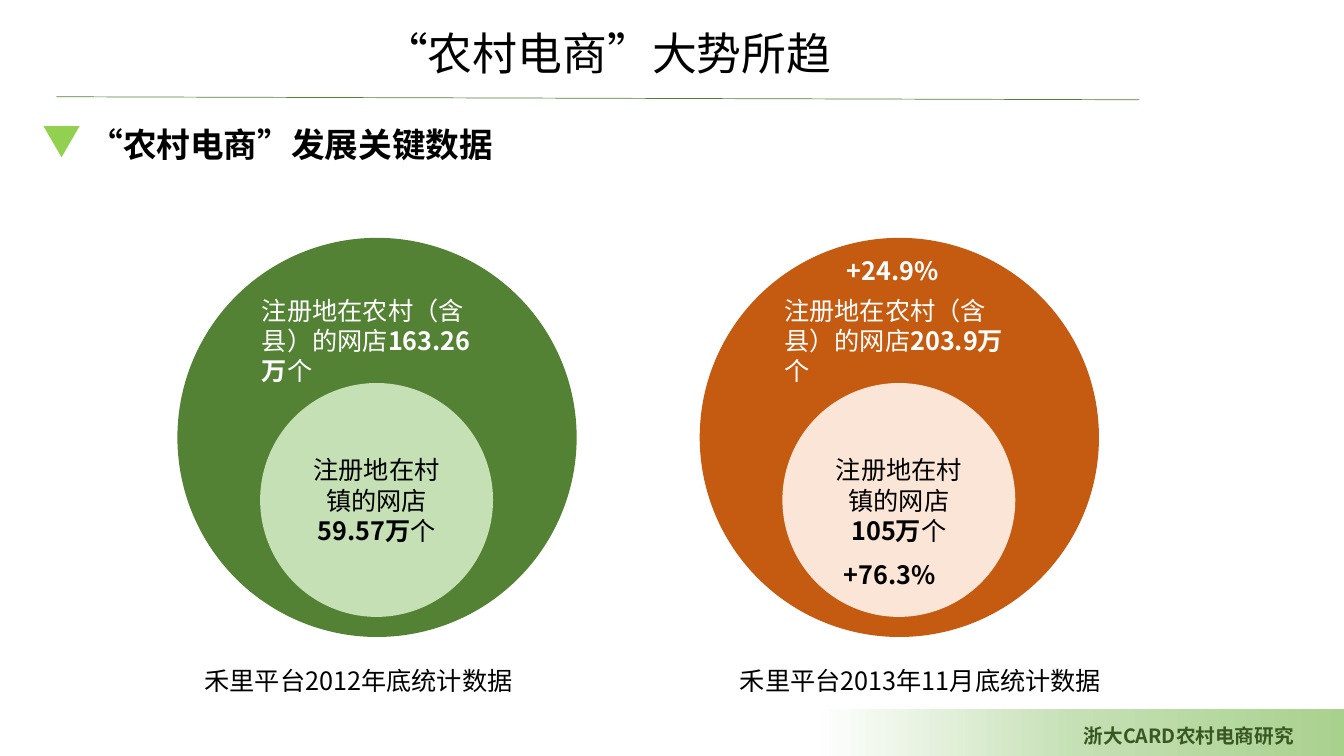
from copy import deepcopy
from pptx import Presentation
from pptx.dml.color import RGBColor
from pptx.enum.shapes import MSO_CONNECTOR as Link, MSO_SHAPE as Form
from pptx.enum.text import MSO_ANCHOR as Anchor, MSO_AUTO_SIZE as Fit, PP_ALIGN as Align
from pptx.oxml.ns import qn
from pptx.util import Inches, Pt
from lxml.etree import SubElement

FONT = "Noto Sans CJK SC"


def paint(color, value):
    color.rgb = RGBColor.from_string(value)


def style(run, size, color, bold):
    run.font.size = Pt(size)
    run.font.bold = bold
    run.font.name = FONT
    paint(run.font.color, color)
    SubElement(run.font._element, qn("a:ea")).set("typeface", FONT)


def write(frame, parts, size, color, align=Align.LEFT):
    frame.word_wrap = True
    para = frame.paragraphs[0]
    para.alignment = align
    for text, bold in parts:
        run = para.add_run()
        run.text = text
        style(run, size, color, bold)


def label(slide, box, parts, size, color, align=Align.LEFT):
    frame = slide.shapes.add_textbox(*map(Inches, box)).text_frame
    write(frame, parts, size, color, align)
    frame.auto_size = Fit.SHAPE_TO_FIT_TEXT


def shape(slide, form, box, color):
    item = slide.shapes.add_shape(form, *map(Inches, box))
    item.shadow.inherit = False
    item.line.fill.background()
    item.fill.solid()
    paint(item.fill.fore_color, color)
    return item


def footer(slide, box):
    left, top, width, height = box
    fill = shape(slide, Form.RECTANGLE, box, "A9D18E").fill
    fill.gradient()
    fill.gradient_angle = 180
    first = fill.gradient_stops[0]._gs
    first.addnext(deepcopy(first))
    hues = ("A9D18E", "C5E0B4", "FFFFFF")
    for stop, place, hue in zip(fill.gradient_stops, (0, 0.5, 1), hues):
        stop.position = place
        paint(stop.color, hue)
    label(slide, (left + 2.57, top + 0.1, width - 2.57, 0.34),
          [("浙大CARD农村电商研究", True)], 14, "385723", Align.JUSTIFY)


def header(slide, box):
    left, top, width, height = box
    title = slide.shapes.title
    title.left, title.top, title.width, title.height = map(
        Inches, (left + 3.14, top, 5.36, 0.64))
    frame = title.text_frame
    write(frame, [("“农村电商”大势所趋", False)], 32, "000000", Align.JUSTIFY)
    frame.vertical_anchor = Anchor.TOP
    frame.auto_size = Fit.SHAPE_TO_FIT_TEXT
    rule = slide.shapes.add_connector(Link.STRAIGHT, *map(Inches, (
        left, top + height - 0.03, left + width, top + height)))
    rule.line.width = Pt(0.5)
    paint(rule.line.color, "548235")
    SubElement(rule._element.spPr, qn("a:effectLst"))


def topic(slide, box):
    left, top, width, height = box
    mark = shape(slide, Form.ISOSCELES_TRIANGLE, (left, top + 0.07, 0.36, 0.31), "92D050")
    mark.rotation = 180
    label(slide, (left + 0.36, top, width - 0.36, height),
          [("“农村电商”发展关键数据", True)], 24, "000000")


def rings(slide, box, hues, rural, town):
    left, top, width, height = box
    shape(slide, Form.OVAL, box, hues[0])
    inner = shape(slide, Form.OVAL, (left + 0.82, top + 1.44, 2.31, 2.32), hues[1])
    inner.text_frame.vertical_anchor = Anchor.MIDDLE
    write(inner.text_frame, [("注册地在村镇的网店", False), (town, True), ("个", False)],
          18, "000000", Align.CENTER)
    label(slide, (left + 0.74, top + 0.52, 2.48, 0.71),
          [("注册地在农村（含县）的网店", False), (rural, True), ("个", False)], 18, "FFFFFF")


def growth(slide, box, rural, town):
    left, top, width, height = box
    label(slide, (left + 1.36, top + 0.12, 1.31, 0.4), [(rural, True)], 18, "FFFFFF")
    label(slide, (left + 1.33, top + 3.14, 1.31, 0.4), [(town, True)], 18, "000000")


def caption(slide, box, text):
    label(slide, box, [(text, False)], 18, "000000")


def main():
    deck = Presentation()
    deck.slide_width, deck.slide_height = Inches(13.33), Inches(7.5)
    slide = deck.slides.add_slide(deck.slide_layouts[5])
    footer(slide, (8.08, 7.03, 5.25, 0.47))
    header(slide, (0.56, 0.2, 10.74, 0.79))
    topic(slide, (0.43, 1.18, 4.92, 0.5))
    past, now = [(left, 2.36, 3.96, 3.96) for left in (1.76, 6.94)]
    rings(slide, past, ("548235", "C5E0B4"), "163.26万", "59.57万")
    rings(slide, now, ("C55A11", "FBE5D6"), "203.9万", "105万")
    growth(slide, now, "+24.9%", "+76.3%")
    caption(slide, (1.93, 6.55, 3.43, 0.4), "禾里平台2012年底统计数据")
    caption(slide, (7.24, 6.55, 3.88, 0.4), "禾里平台2013年11月底统计数据")
    deck.save("out.pptx")


if __name__ == "__main__":
    main()
